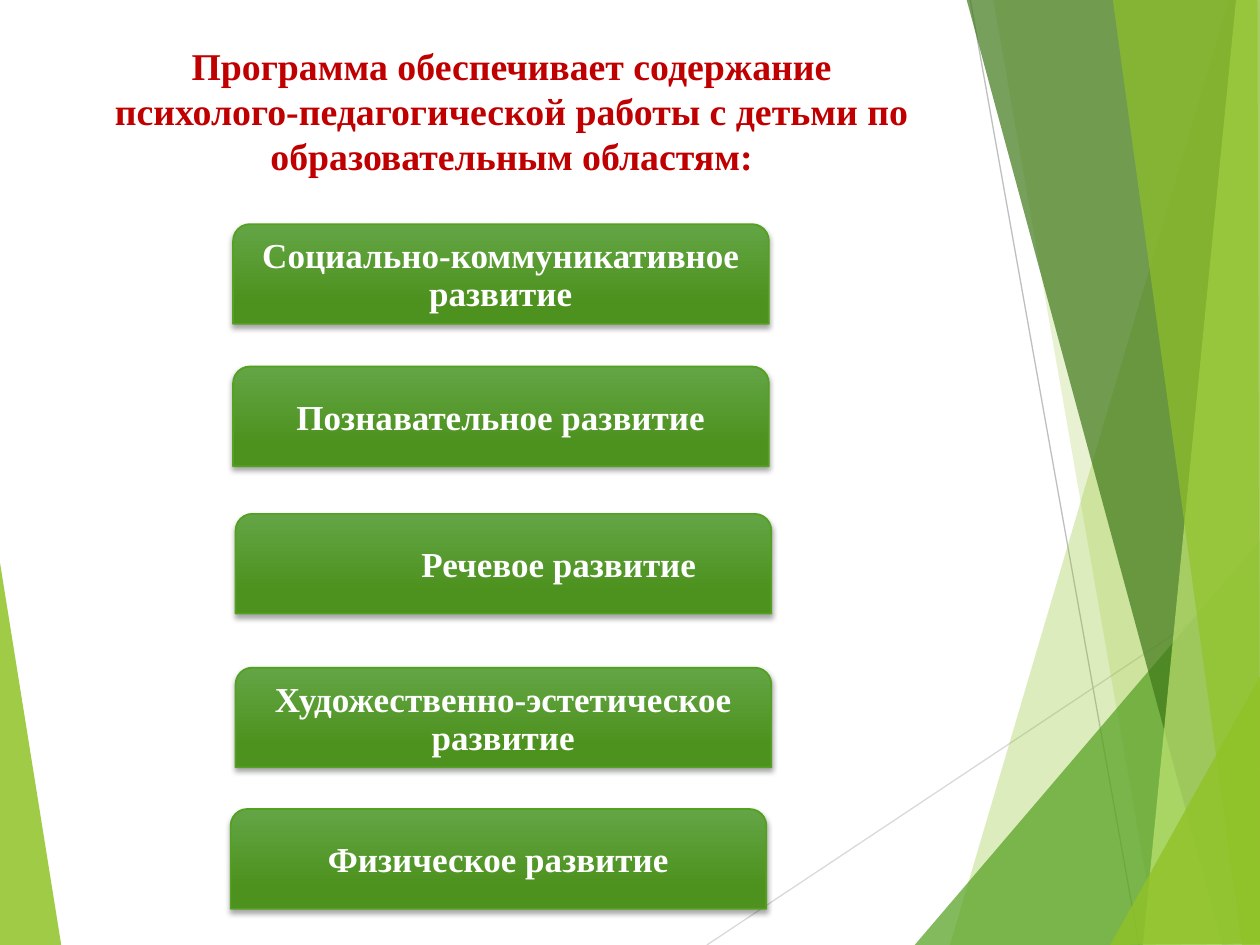
"""Build a slide listing the five educational areas of a programme."""
from dataclasses import dataclass

from lxml import etree
from pptx import Presentation
from pptx.dml.color import RGBColor
from pptx.enum.shapes import MSO_CONNECTOR, MSO_SHAPE
from pptx.enum.text import MSO_ANCHOR, PP_ALIGN
from pptx.oxml.ns import qn
from pptx.util import Cm, Pt

STRAIGHT = MSO_CONNECTOR.STRAIGHT
ROUNDED_TOP = MSO_SHAPE.ROUND_2_SAME_RECTANGLE
MIDDLE = MSO_ANCHOR.MIDDLE
TOP = MSO_ANCHOR.TOP
CENTER = PP_ALIGN.CENTER

FONT = "Times New Roman"
BUTTON_WIDTH, BUTTON_HEIGHT = 10.8, 2.01
LABEL_WIDTH, LABEL_HEIGHT = 10.69, 1.91
UNITS_PER_CM = 1000


@dataclass
class Facet:
    """A translucent polygon of the background, in centimetres."""
    points: list[tuple[float, float]]
    color: str
    opacity: int


@dataclass
class Ray:
    """A thin background line, in centimetres."""
    start: tuple[float, float]
    end: tuple[float, float]
    color: str


@dataclass
class Area:
    """An educational area shown as a button."""
    name: str
    left: float
    top: float
    label_shift: float = 0.05


BACKGROUND = [
    Facet([(-0.03, 11.15), (1.24, 19.08), (-0.03, 19.05)], "90C226", 85),
    Ray((14.25, 19.05), (25.43, 11.61), "D9D9D9"),
    Ray((19.56, 0), (22.96, 19.05), "BFBFBF"),
    Facet([(24.77, 0), (19.15, 19.05), (25.45, 19.08), (25.43, 0.03)], "90C226", 30),
    Facet([(20.02, -0.03), (23.34, 19.05), (25.43, 19.05), (25.43, -0.03)], "90C226", 20),
    Facet([(18.44, 19.05), (25.4, 10.9), (25.43, 19.05)], "54A021", 72),
    Facet([(19.48, -0.03), (24.64, 19.05), (25.43, 19.02), (25.43, -0.03)], "3F7819", 70),
    Facet([(24.92, -0.03), (23.04, 19.05), (25.43, 19.05), (25.4, -0.03)], "C0E474", 70),
    Facet([(22.43, -0.03), (25.04, 19.05), (25.4, 19.05), (25.35, -0.03)], "90C226", 65),
    Facet([(22.38, 19.05), (25.43, 13.59), (25.43, 19.02)], "90C226", 80),
]

TITLE_LINES = [
    "Программа обеспечивает содержание",
    "психолого-педагогической работы с детьми по образовательным областям:",
]

AREAS = [
    Area("Социально-коммуникативное развитие", 4.7, 4.52),
    Area("Познавательное развитие", 4.7, 7.39),
    Area("Речевое развитие", 4.75, 10.36, label_shift=1.17),
    Area("Художественно-эстетическое развитие", 4.75, 13.46),
    Area("Физическое развитие", 4.65, 16.31),
]


def rgb(value: str) -> RGBColor:
    """Turn a hex string into a colour."""
    return RGBColor.from_string(value)


def draw_facet(shapes, facet: Facet) -> None:
    """Draw one translucent polygon without an outline."""
    points = [(x * UNITS_PER_CM, y * UNITS_PER_CM) for x, y in facet.points]
    builder = shapes.build_freeform(*points[0], scale=Cm(1) / UNITS_PER_CM)
    builder.add_line_segments(points[1:], close=True)
    shape = builder.convert_to_shape()
    shape.shadow.inherit = False
    shape.line.fill.background()
    shape.fill.solid()
    shape.fill.fore_color.rgb = rgb(facet.color)
    color = shape.fill._xPr.find(".//" + qn("a:srgbClr"))
    etree.SubElement(color, qn("a:alpha"), val=str(facet.opacity * 1000))


def draw_ray(shapes, ray: Ray) -> None:
    """Draw one thin line without a shadow."""
    ends = [Cm(length) for length in (*ray.start, *ray.end)]
    connector = shapes.add_connector(STRAIGHT, *ends)
    connector.line.color.rgb = rgb(ray.color)
    connector.line.width = Pt(0.75)
    etree.SubElement(connector._element.spPr, qn("a:effectLst"))


def add_shadow(shape) -> None:
    """Give a shape a soft shadow straight below it."""
    shape.shadow.inherit = False
    effects = shape._element.spPr.find(qn("a:effectLst"))
    shadow = etree.SubElement(
        effects, qn("a:outerShdw"), blurRad=str(Pt(3)), dist=str(Pt(2)),
        dir="5400000", rotWithShape="0")
    color = etree.SubElement(shadow, qn("a:srgbClr"), val="000000")
    etree.SubElement(color, qn("a:alpha"), val="35000")


def add_text(shapes, box: tuple[float, float, float, float], lines: list[str],
             size: float, color: str, spacing, anchor, inset: float) -> None:
    """Add a centred bold text box whose lines share one paragraph."""
    frame = shapes.add_textbox(*(Cm(length) for length in box)).text_frame
    frame.word_wrap = True
    frame.vertical_anchor = anchor
    frame.margin_left = frame.margin_right = Cm(inset)
    frame.margin_top = frame.margin_bottom = Cm(min(inset, 0.13))
    paragraph = frame.paragraphs[0]
    paragraph.alignment = CENTER
    paragraph.line_spacing = spacing
    for index, line in enumerate(lines):
        if index:
            paragraph.add_line_break()
        run = paragraph.add_run()
        run.text = line
        run.font.name = FONT
        run.font.size = Pt(size)
        run.font.bold = True
        run.font.color.rgb = rgb(color)


def draw_area(shapes, area: Area) -> None:
    """Draw a gradient button grouped with its label."""
    group = shapes.add_group_shape()
    button = group.shapes.add_shape(
        ROUNDED_TOP, Cm(area.left), Cm(area.top), Cm(BUTTON_WIDTH), Cm(BUTTON_HEIGHT))
    button.adjustments[0] = 0.167
    button.adjustments[1] = 0
    button.fill.gradient()
    button.fill.gradient_angle = 270
    stops = button.fill.gradient_stops
    for stop, color, position in zip(stops, ("63A545", "4D921E"), (0, 0.78)):
        stop.color.rgb = rgb(color)
        stop.position = position
    button.line.color.rgb = rgb("54A021")
    button.line.width = Pt(1)
    add_shadow(button)
    box = (area.left + area.label_shift, area.top + 0.1, LABEL_WIDTH, LABEL_HEIGHT)
    add_text(group.shapes, box, [area.name], 20, "FFFFFF", 0.9, MIDDLE, 0.1)


def main() -> None:
    """Build and save the presentation."""
    presentation = Presentation()
    presentation.slide_width = Cm(25.4)
    presentation.slide_height = Cm(19.05)
    slide = presentation.slides.add_slide(presentation.slide_layouts[6])
    for item in BACKGROUND:
        if isinstance(item, Facet):
            draw_facet(slide.shapes, item)
        else:
            draw_ray(slide.shapes, item)
    add_text(slide.shapes, (1.5, 0.74, 17.63, 3.66), TITLE_LINES,
             21.6, "C00000", Pt(25.7), TOP, 0.25)
    for area in AREAS:
        draw_area(slide.shapes, area)
    presentation.save("out.pptx")


if __name__ == "__main__":
    main()
